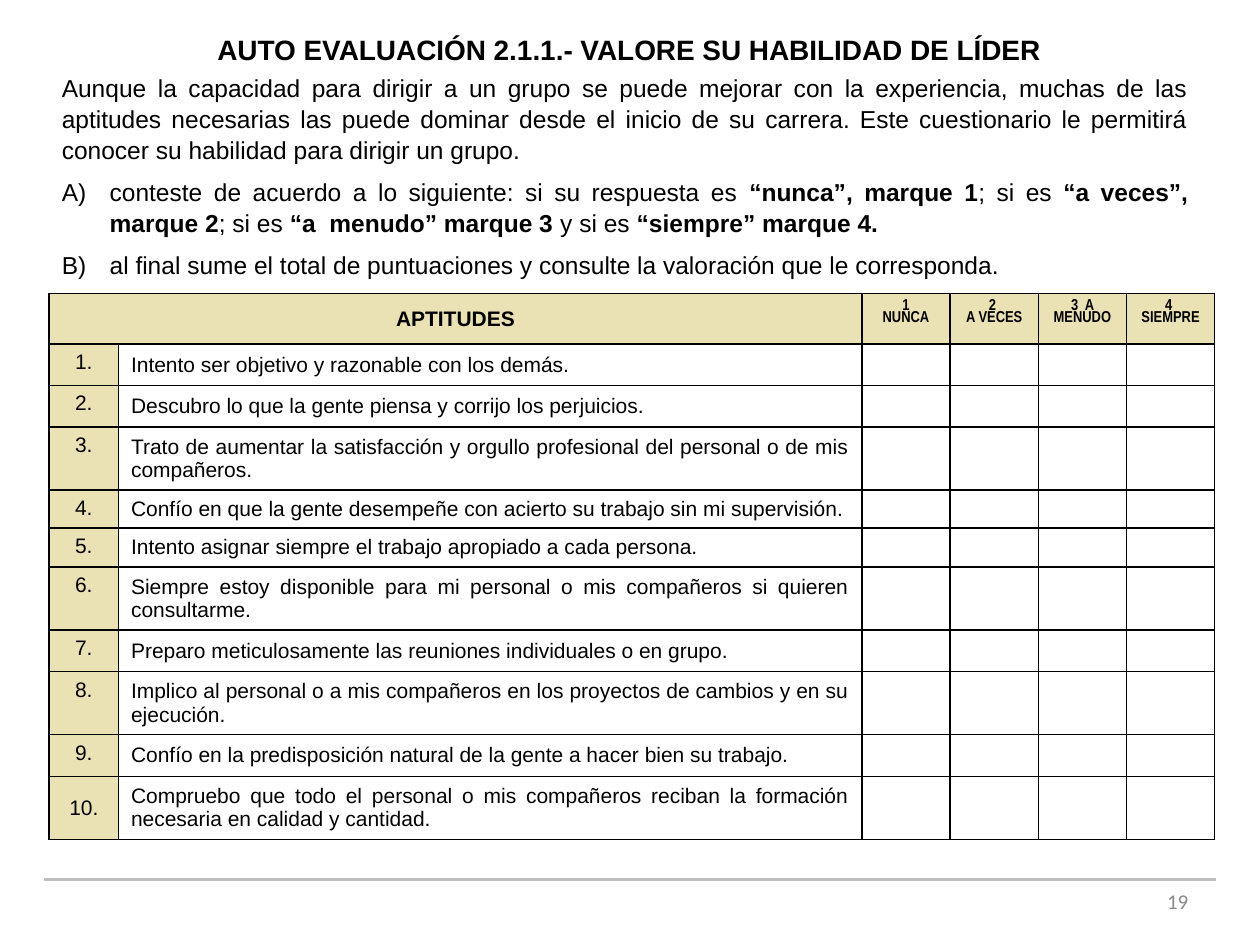
from dataclasses import dataclass

from lxml.etree import SubElement
from pptx import Presentation
from pptx.dml.color import RGBColor
from pptx.enum.shapes import MSO_CONNECTOR
from pptx.enum.text import MSO_ANCHOR, MSO_AUTO_SIZE, PP_ALIGN
from pptx.oxml.ns import qn
from pptx.util import Inches, Pt


@dataclass(frozen=True)
class Theme:
    black: str = "000000"
    white: str = "FFFFFF"
    sand: str = "EAE2B4"
    rule: str = "BFBFBF"
    grey: str = "898989"
    title_size: int = 16
    body_size: int = 14
    table_size: int = 12
    scale_size: int = 9


theme = Theme()


def add_text(paragraph, text, size, align, bold=False, name="Arial", color=theme.black):
    paragraph.alignment = align
    run = paragraph.add_run()
    run.text = text
    run.font.color.rgb = RGBColor.from_string(color)
    for key, value in {"size": Pt(size), "bold": bold, "name": name}.items():
        setattr(run.font, key, value)


def format_cell(cell, color, anchor=MSO_ANCHOR.TOP):
    properties = cell._tc.get_or_add_tcPr()
    for side in ("a:lnL", "a:lnR", "a:lnT", "a:lnB"):
        border = SubElement(properties, qn(side), w=str(Pt(1)))
        fill = SubElement(border, qn("a:solidFill"))
        SubElement(fill, qn("a:srgbClr"), val=theme.black)
    cell.fill.solid()
    cell.fill.fore_color.rgb = RGBColor.from_string(color)
    cell.vertical_anchor = anchor


prs = Presentation()
prs.slide_width, prs.slide_height = Inches(10), Inches(7.5)
slide = prs.slides.add_slide(prs.slide_layouts[1])
title, instructions = slide.placeholders

# Footer rule and page number
footer_rule = slide.shapes.add_connector(
    MSO_CONNECTOR.STRAIGHT, Inches(0.35), Inches(6.98), Inches(9.65), Inches(6.98))
footer_rule.line.color.rgb = RGBColor.from_string(theme.rule)
footer_rule.line.width = Pt(2)
SubElement(footer_rule._element.spPr, qn("a:effectLst"))

page_number = slide.shapes.add_textbox(Inches(7.17), Inches(6.95), Inches(2.36), Inches(0.4))
page_number.text_frame.word_wrap = True
page_number.text_frame.vertical_anchor = MSO_ANCHOR.MIDDLE
add_text(page_number.text_frame.paragraphs[0], "19", theme.table_size, PP_ALIGN.RIGHT,
         name="Calibri", color=theme.grey)

# Title and instructions
for placeholder, box in ((title, (0.27, 0.21, 9.45, 0.37)),
                         (instructions, (0.39, 0.52, 9.14, 1.75))):
    placeholder.left, placeholder.top, placeholder.width, placeholder.height = map(Inches, box)
    frame_format = {"word_wrap": True, "vertical_anchor": MSO_ANCHOR.TOP,
                    "auto_size": MSO_AUTO_SIZE.SHAPE_TO_FIT_TEXT}
    for key, value in frame_format.items():
        setattr(placeholder.text_frame, key, value)

add_text(title.text_frame.paragraphs[0], "AUTO EVALUACIÓN 2.1.1.- VALORE SU HABILIDAD DE LÍDER",
         theme.title_size, PP_ALIGN.CENTER, bold=True)

# Each paragraph alternates regular and bold pieces
instruction_texts = [
    ["Aunque la capacidad para dirigir a un grupo se puede mejorar con la experiencia, muchas "
     "de las aptitudes necesarias las puede dominar desde el inicio de su carrera. Este "
     "cuestionario le permitirá conocer su habilidad para dirigir un grupo. "],
    ["A)\tconteste de acuerdo a lo siguiente: si su respuesta es ", "“nunca”, marque 1",
     "; si es", " “a veces”, marque 2", "; si es ", "“a  menudo” marque 3 ",
     "y si es ", "“siempre” marque 4."],
    ["B)\tal final sume el total de puntuaciones y consulte la valoración que le corresponda."],
]
for number, pieces in enumerate(instruction_texts):
    frame = instructions.text_frame
    paragraph = frame.add_paragraph() if number else frame.paragraphs[0]
    indent = Inches(0.38) if number else 0
    properties = paragraph._p.get_or_add_pPr()
    properties.set("marL", str(indent))
    properties.set("indent", str(-indent))
    SubElement(properties, qn("a:buNone"))
    paragraph.line_spacing = 1.05
    paragraph.space_before = Pt(6.5 if number else 0)
    for position, piece in enumerate(pieces):
        add_text(paragraph, piece, theme.body_size, PP_ALIGN.JUSTIFY, bold=position % 2 == 1)

# Questionnaire table
aptitudes = [
    "Intento ser objetivo y razonable con los demás.",
    "Descubro lo que la gente piensa y corrijo los perjuicios.",
    "Trato de aumentar la satisfacción y orgullo profesional del personal o de mis compañeros.",
    "Confío en que la gente desempeñe con acierto su trabajo sin mi supervisión.",
    "Intento asignar siempre el trabajo apropiado a cada persona.",
    "Siempre estoy disponible para mi personal o mis compañeros si quieren consultarme.",
    "Preparo meticulosamente las reuniones individuales o en grupo.",
    "Implico al personal o a mis compañeros en los proyectos de cambios y en su ejecución.",
    "Confío en la predisposición natural de la gente a hacer bien su trabajo.",
    "Compruebo que todo el personal o mis compañeros reciban la formación necesaria en "
    "calidad y cantidad.",
]
scale = [["1", "NUNCA"], ["2 ", "A VECES"], ["3  A MENUDO"], ["4 ", "SIEMPRE"]]
column_widths = [0.55, 5.9] + [0.7] * len(scale)
row_heights = [0.4, 0.33, 0.33, 0.5, 0.3, 0.31, 0.5, 0.33, 0.5, 0.33, 0.5]

questionnaire = slide.shapes.add_table(
    len(row_heights), len(column_widths), Inches(0.39), Inches(2.33),
    Inches(sum(column_widths)), Inches(sum(row_heights))).table
questionnaire.first_row = questionnaire.horz_banding = False
for column, width in zip(questionnaire.columns, column_widths):
    column.width = Inches(width)
for row, height in zip(questionnaire.rows, row_heights):
    row.height = Inches(height)

# Header row
heading = questionnaire.cell(0, 0)
heading.merge(questionnaire.cell(0, 1))
for column in (0, 1):
    format_cell(questionnaire.cell(0, column), theme.sand, MSO_ANCHOR.MIDDLE)
add_text(heading.text_frame.paragraphs[0], "APTITUDES", theme.table_size,
         PP_ALIGN.CENTER, bold=True)
for column, labels in enumerate(scale, start=2):
    scale_cell = questionnaire.cell(0, column)
    format_cell(scale_cell, theme.sand)
    for position, label in enumerate(labels):
        frame = scale_cell.text_frame
        paragraph = frame.add_paragraph() if position else frame.paragraphs[0]
        paragraph.line_spacing = 0.85
        add_text(paragraph, label, theme.scale_size, PP_ALIGN.CENTER, bold=True,
                 name="Arial Narrow")

# Numbered aptitudes with blank answer cells
for row, aptitude in enumerate(aptitudes, start=1):
    number_cell, aptitude_cell, *answers = questionnaire.rows[row].cells
    last = row == len(aptitudes)
    format_cell(number_cell, theme.sand, MSO_ANCHOR.MIDDLE if last else MSO_ANCHOR.TOP)
    add_text(number_cell.text_frame.paragraphs[0], f"{row}.", theme.table_size, PP_ALIGN.CENTER)
    format_cell(aptitude_cell, theme.white, MSO_ANCHOR.MIDDLE)
    add_text(aptitude_cell.text_frame.paragraphs[0], aptitude, theme.table_size,
             PP_ALIGN.JUSTIFY)
    for answer in answers:
        format_cell(answer, theme.white)
        SubElement(answer.text_frame.paragraphs[0]._p, qn("a:endParaRPr"),
                   sz=str(theme.table_size * 100))

prs.save("out.pptx")
